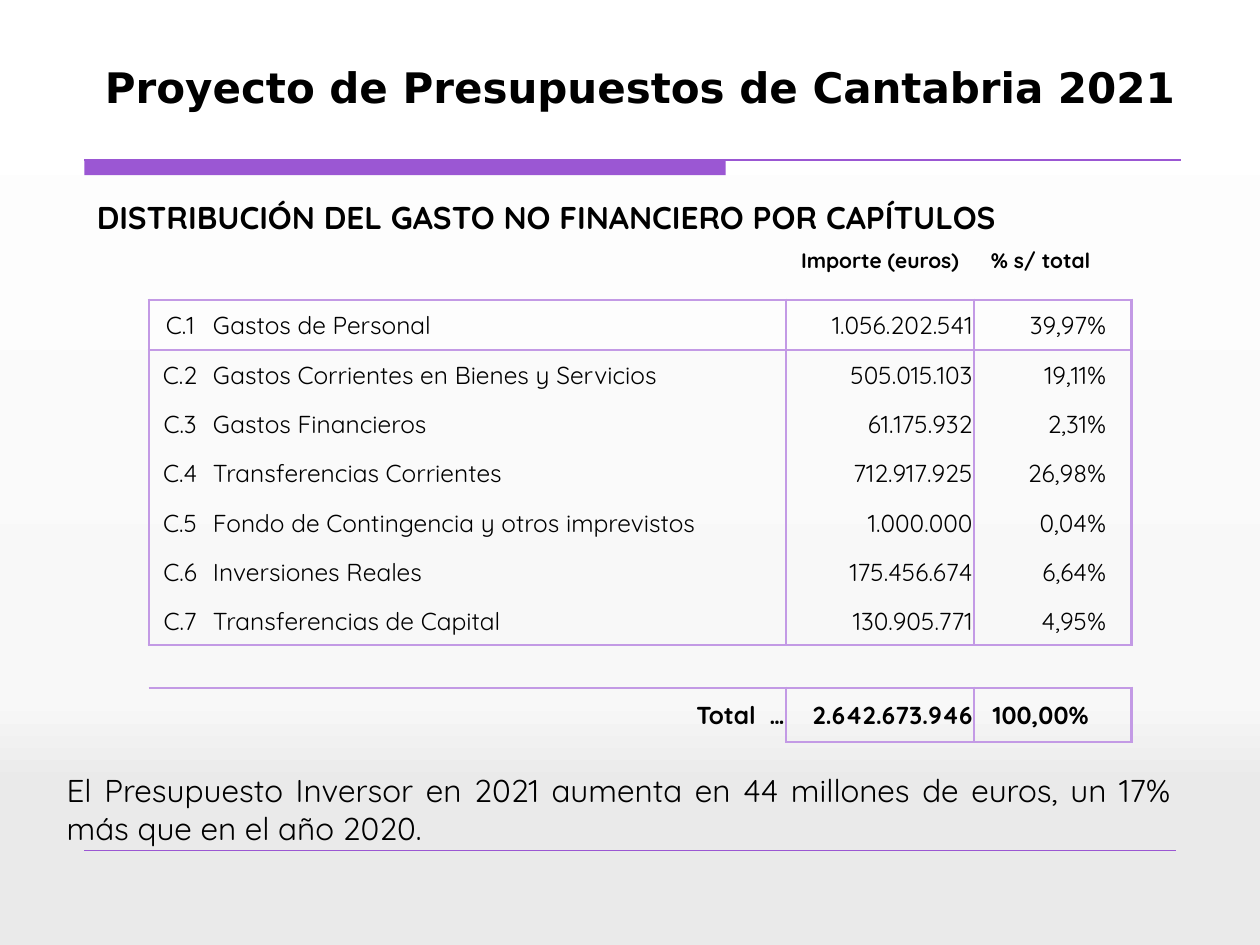
import pptx
import pptx.util
from lxml import etree
from pptx.dml.color import RGBColor
from pptx.enum.shapes import MSO_CONNECTOR, MSO_SHAPE
from pptx.enum.text import MSO_ANCHOR, PP_ALIGN
from pptx.oxml.ns import qn
from pptx.util import Inches

COLORS = {"purple": "9B57D3", "border": "C39AE5", "text": "000000"}
BACKGROUND = [(0, "FFFFFF"), (74, "F8F8F8"), (83, "EAEAEA"), (100, "EAEAEA")]
BODY_FONT = "Quicksand"
LEFT, CENTER, RIGHT, JUSTIFY = (
    PP_ALIGN.LEFT, PP_ALIGN.CENTER, PP_ALIGN.RIGHT, PP_ALIGN.JUSTIFY)

COL_WIDTHS = [0.5, 4.56, 1.49, 1.06, 0.19]
ROW_HEIGHTS = [0.64, 0.4] + [0.39] * 6 + [0.34, 0.43]
HEADER = ["", "", "Importe (euros)", "% s/ total"]
CHAPTERS = [
    ("C.1", "Gastos de Personal", "1.056.202.541", "39,97%"),
    ("C.2", "Gastos Corrientes en Bienes y Servicios", "505.015.103", "19,11%"),
    ("C.3", "Gastos Financieros", "61.175.932", "2,31%"),
    ("C.4", "Transferencias Corrientes", "712.917.925", "26,98%"),
    ("C.5", "Fondo de Contingencia y otros imprevistos", "1.000.000", "0,04%"),
    ("C.6", "Inversiones Reales", "175.456.674", "6,64%"),
    ("C.7", "Transferencias de Capital", "130.905.771", "4,95%"),
]
TOTAL = ["", "Total  …", "2.642.673.946", "100,00%"]
NO_STYLE = "{2D5ABB26-0587-4C30-8999-92F81FD0307C}"


def rgb(name):
    return RGBColor.from_string(COLORS[name])


def write(tf, text, size=18, font=BODY_FONT, bold=False, align=LEFT):
    p = tf.paragraphs[0]
    p.alignment = align
    r = p.add_run()
    r.text = text
    r.font.size = pptx.util.Pt(size)
    r.font.name = font
    r.font.bold = bold
    r.font.color.rgb = rgb("text")


def add_text(s, left, top, width, height, text, **fmt):
    sp = s.shapes.add_textbox(
        Inches(left), Inches(top), Inches(width), Inches(height))
    sp.text_frame.word_wrap = True
    write(sp.text_frame, text, **fmt)


def add_rule(s, left, right, y, width):
    line = s.shapes.add_connector(
        MSO_CONNECTOR.STRAIGHT, Inches(left), Inches(y), Inches(right), Inches(y))
    line.line.color.rgb = rgb("purple")
    line.line.width = pptx.util.Pt(width)
    etree.SubElement(line._element.spPr, qn("a:effectLst"))


def add_bar(s, left, top, width, height):
    sp = s.shapes.add_shape(
        MSO_SHAPE.RECTANGLE, Inches(left), Inches(top), Inches(width), Inches(height))
    sp.shadow.inherit = False
    sp.fill.solid()
    sp.fill.fore_color.rgb = rgb("purple")
    sp.line.fill.background()


def set_background(s):
    s.background.fill.gradient()
    grad = s._element.find(".//" + qn("a:gradFill"))
    stops = grad.find(qn("a:gsLst"))
    for stop in list(stops):
        stops.remove(stop)
    for position, color in BACKGROUND:
        stop = etree.SubElement(stops, qn("a:gs"), pos=str(position * 1000))
        etree.SubElement(stop, qn("a:srgbClr"), val=color)
    grad.find(qn("a:lin")).set("ang", str(90 * 60000))


def frame_of(row, col):
    """Name the outlined block that a cell belongs to, or None."""
    if not 0 <= col < len(COL_WIDTHS):
        return None
    if 1 <= row <= len(CHAPTERS):
        return "names" if col < 2 else "amounts"
    if row == len(ROW_HEIGHTS) - 1 and col >= 2:
        return "total"
    return None


def set_borders(cell, row, col):
    """Draw each side where one outlined block ends and another begins."""
    tc_pr = cell._tc.get_or_add_tcPr()
    sides = [("L", 0, -1), ("R", 0, 1), ("T", -1, 0), ("B", 1, 0)]
    edges = [side for side, dr, dc in sides
             if frame_of(row + dr, col + dc) != frame_of(row, col)]
    for i, side in enumerate(edges):
        ln = etree.Element(qn("a:ln" + side), w=str(pptx.util.Pt(1.5)))
        fill = etree.SubElement(ln, qn("a:solidFill"))
        etree.SubElement(fill, qn("a:srgbClr"), val=COLORS["border"])
        tc_pr.insert(i, ln)


def add_budget_table(s):
    rows = [HEADER, *CHAPTERS, [], TOTAL]
    frame = s.shapes.add_table(
        len(ROW_HEIGHTS), len(COL_WIDTHS), Inches(1.18), Inches(1.74),
        Inches(sum(COL_WIDTHS)), Inches(sum(ROW_HEIGHTS)))
    table = frame.table
    table.first_row = table.horz_banding = False
    frame._element.find(".//" + qn("a:tableStyleId")).text = NO_STYLE
    for column, width in zip(table.columns, COL_WIDTHS):
        column.width = Inches(width)
    for row, height in zip(table.rows, ROW_HEIGHTS):
        row.height = Inches(height)

    for i, texts in enumerate(rows):
        aligns = [CENTER, LEFT, RIGHT, RIGHT]
        if texts is HEADER:
            aligns = [CENTER] * 4
        elif texts is TOTAL:
            aligns = [CENTER, RIGHT, RIGHT, CENTER]
        for j in range(len(COL_WIDTHS)):
            cell = table.cell(i, j)
            cell.fill.background()
            cell.vertical_anchor = MSO_ANCHOR.MIDDLE
            cell.margin_left = cell.margin_right = cell.margin_top = Inches(0.01)
            cell.margin_bottom = 0
            set_borders(cell, i, j)
            if j < len(texts) and texts[j]:
                write(cell.text_frame, texts[j], align=aligns[j],
                      size=12 if texts is HEADER else 14,
                      bold=texts is HEADER or texts is TOTAL)


def main():
    prs = pptx.Presentation()
    prs.slide_width, prs.slide_height = Inches(10), Inches(7.5)
    s = prs.slides.add_slide(prs.slide_layouts[6])
    set_background(s)
    add_bar(s, 0.67, 1.27, 5.09, 0.12)
    add_rule(s, 0.67, 9.37, 1.27, 0.75)
    add_rule(s, 0.67, 9.33, 6.75, 0.25)
    add_text(s, 0.67, 0.44, 8.82, 1.11, "Proyecto de Presupuestos de Cantabria 2021",
             size=24, font="DejaVu Sans", bold=True, align=CENTER)
    add_budget_table(s)
    add_text(s, 0.67, 1.52, 8.27, 0.4,
             "DISTRIBUCIÓN DEL GASTO NO FINANCIERO POR CAPÍTULOS", bold=True)
    add_text(s, 0.43, 6.07, 8.96, 1.01,
             "El Presupuesto Inversor en 2021 aumenta en 44 millones de euros, "
             "un 17% más que en el año 2020.", align=JUSTIFY)
    prs.save("out.pptx")


if __name__ == "__main__":
    main()
